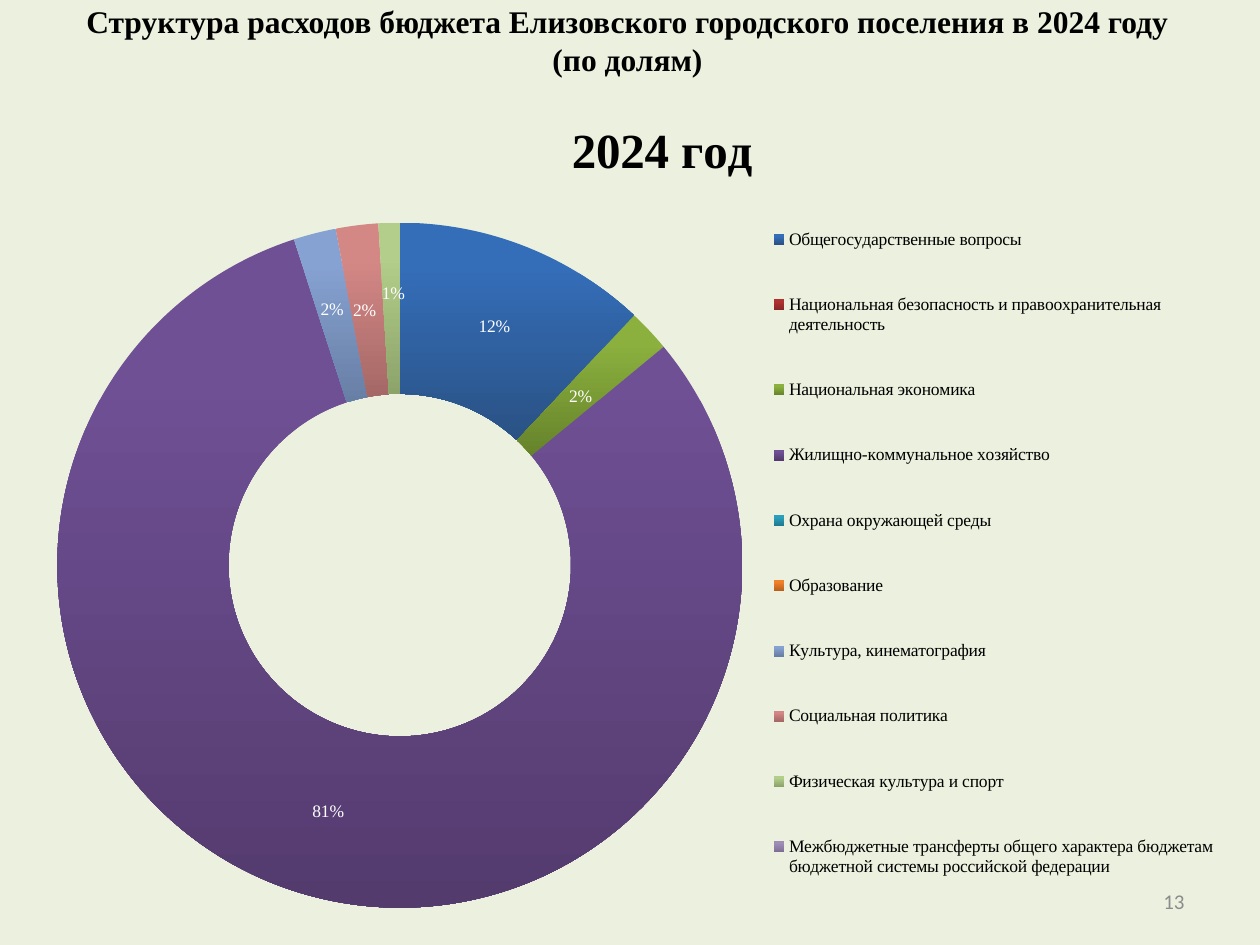
from copy import deepcopy

from lxml import etree
from pptx import Presentation
from pptx.chart.data import CategoryChartData
from pptx.dml.color import RGBColor
from pptx.enum.chart import XL_CHART_TYPE, XL_LEGEND_POSITION
from pptx.enum.text import MSO_ANCHOR, PP_ALIGN
from pptx.oxml import parse_xml
from pptx.oxml.ns import qn
from pptx.util import Cm, Pt

RING = XL_CHART_TYPE.DOUGHNUT
RIGHT = XL_LEGEND_POSITION.RIGHT
MIDDLE = MSO_ANCHOR.MIDDLE
CENTER, END = PP_ALIGN.CENTER, PP_ALIGN.RIGHT
SERIF = "Times New Roman"
NS = 'xmlns:c="http://schemas.openxmlformats.org/drawingml/2006/chart"'
WIDE, HIGH = 24.2, 16.66  # chart size in cm


def style(font, size, color, name=SERIF, bold=False):
    font.size, font.name, font.bold = Pt(size), name, bold
    font.color.rgb = RGBColor.from_string(color)


def place(node, spot, modes, **sizes):
    """Give a chart part a manual layout; sizes are in cm."""
    for old in node.findall(qn("c:layout")):
        node.remove(old)
    vals = dict(modes)
    for key, size in sizes.items():
        vals[key] = size / (WIDE if key in "xw" else HIGH)
    tags = "".join(f'<c:{key} val="{val}"/>' for key, val in vals.items())
    node.insert(spot, parse_xml(
        f"<c:layout {NS}><c:manualLayout>{tags}</c:manualLayout></c:layout>"))


# Slide and background
prs = Presentation()
prs.slide_width, prs.slide_height = Cm(25.4), Cm(19.05)
slide = prs.slides.add_slide(prs.slide_layouts[5])
back = slide.background.fill
back.solid()
back.fore_color.rgb = RGBColor.from_string("EBF1DE")

# Title
title = slide.shapes.title
title.left, title.top = Cm(0.8), Cm(0.4)
title.width, title.height = Cm(23.7), Cm(0.8)
frame = title.text_frame
frame.text = ("Структура расходов бюджета Елизовского городского поселения "
              "в 2024 году\v(по долям)")
frame.vertical_anchor = MIDDLE
frame.paragraphs[0].alignment = CENTER
for run in frame.paragraphs[0].runs:
    style(run.font, 18, "000000", bold=True)

# Spending shares: name, percent, top and bottom colour of the slice
rows = [
    ("Общегосударственные вопросы", 12, "346DB8", "2A5284"),
    ("Национальная безопасность и правоохранительная деятельность",
     0, "B03230", "882826"),
    ("Национальная экономика", 2, "8BB03E", "66832B"),
    ("Жилищно-коммунальное хозяйство", 81, "6F5095", "543B6E"),
    ("Охрана окружающей среды", 0, "2BA0BC", "1F7A90"),
    ("Образование", 0, "F0812A", "B85F1C"),
    ("Культура, кинематография", 2, "86A2D2", "687FA5"),
    ("Социальная политика", 2, "D48886", "A56866"),
    ("Физическая культура и спорт", 1, "B3CE8A", "8CA36A"),
    ("Межбюджетные трансферты общего характера бюджетам "
     "бюджетной системы российской федерации", 0, "9F8DB8", "7E6E94"),
]
data = CategoryChartData()
data.categories = [row[0] for row in rows]
data.add_series("2024 год", [row[1] for row in rows])
chart = slide.shapes.add_chart(
    RING, Cm(0.58), Cm(1.98), Cm(WIDE), Cm(HIGH), data).chart
style(chart.font, 10, "000000")

# Chart heading
chart.has_title = True
head = chart.chart_title
head.text_frame.text = "2024 год"
style(head.text_frame.paragraphs[0].runs[0].font, 28, "000000", bold=True)
head.include_in_layout = False

# Legend
chart.has_legend = True
legend = chart.legend
legend.position = RIGHT
legend.include_in_layout = False
style(legend.font, 10, "000000")

# Slices
plot = chart.plots[0]
plot.vary_by_categories = True
ring = plot.series[0]
for i, (name, val, *tones) in enumerate(rows):
    look = ring.points[i].format
    look.fill.gradient()
    look.fill.gradient_angle = 270
    for stop, tone, pos in zip(look.fill.gradient_stops, tones, (0.2, 1)):
        stop.color.rgb = RGBColor.from_string(tone)
        stop.position = pos
    look.line.fill.background()

# Percent labels
labels = ring.data_labels
labels.show_percentage, labels.show_value = True, False
labels.number_format, labels.number_format_is_linked = "0%", False
style(labels.font, 10, "FFFFFF")

# Labels shifted apart (index: right, down); the last slice has no label
shifts = {2: (-0.13, 0.14), 4: (-0.03, 0.16), 5: (0.17, 0.92),
          6: (-0.08, -0.13), 7: (-0.06, 0), 8: (0.03, -0.3)}
group = ring._element.find(qn("c:dLbls"))
parts = [part for part in group if part.tag != qn("c:showLeaderLines")]
for spot, (i, (x, y)) in enumerate(shifts.items()):
    label = parse_xml(f'<c:dLbl {NS}><c:idx val="{i}"/></c:dLbl>')
    label.extend(deepcopy(part) for part in parts)
    place(label, 1, {}, x=x, y=y)
    group.insert(spot, label)
none = parse_xml(f'<c:dLbl {NS}><c:idx val="9"/></c:dLbl>')
etree.SubElement(none, qn("c:delete")).set("val", "1")
group.insert(len(shifts), none)

# Chart layout
edge = {"xMode": "edge", "yMode": "edge"}
area = chart._chartSpace.chart.plotArea
place(area, 0, {"layoutTarget": "inner", **edge},
      x=0.57, y=2.51, w=13.82, h=13.81)
place(head._element, 1, edge, x=10.77, y=0.24)
place(legend._element, 1, edge, x=14.84, y=1.73, w=9.2, h=14.88)

# Slide number
box = slide.shapes.add_textbox(Cm(18.21), Cm(17.65), Cm(5.92), Cm(1.02))
frame = box.text_frame
frame.word_wrap = True
frame.vertical_anchor = MIDDLE
frame.text = "13"
frame.paragraphs[0].alignment = END
style(frame.paragraphs[0].runs[0].font, 12, "8C8C8C", "Calibri")

prs.save("out.pptx")
